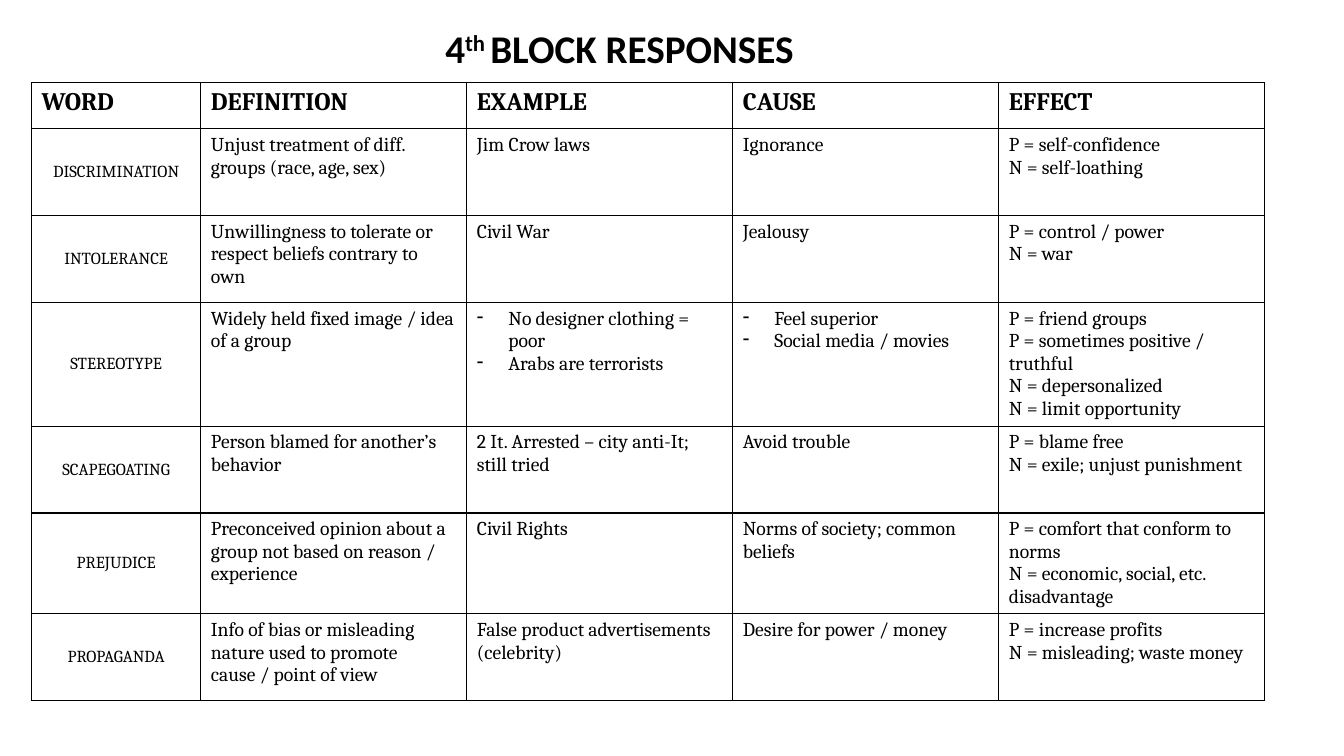
"""Builds a vocabulary table slide of class responses."""
from dataclasses import dataclass

from lxml import etree
from pptx import Presentation
from pptx import util as u
from pptx.dml.color import RGBColor
from pptx.enum import text
from pptx.oxml import ns


@dataclass(frozen=True)
class Theme:
    """Colours, fonts and type sizes."""
    ink: str = "000000"
    title_font: str = "Calibri"
    table_font: str = "Cambria"
    title_size: int = 28
    header_size: int = 18
    answer_size: int = 14
    word_size: int = 12
    rule_width: int = 1
    indent: float = 22.5


HEADINGS = ["WORD", "DEFINITION", "EXAMPLE", "CAUSE", "EFFECT"]
RESPONSES = [
    ["DISCRIMINATION", "Unjust treatment of diff. groups (race, age, sex)",
     "Jim Crow laws", "Ignorance", "P = self-confidence\nN = self-loathing"],
    ["INTOLERANCE", "Unwillingness to tolerate or respect beliefs contrary to own",
     "Civil War", "Jealousy", "P = control / power\nN = war"],
    ["STEREOTYPE", "Widely held fixed image / idea of a group",
     ["No designer clothing = poor", "Arabs are terrorists"],
     ["Feel superior", "Social media / movies"],
     "P = friend groups\nP = sometimes positive / truthful\n"
     "N = depersonalized\nN = limit opportunity"],
    ["SCAPEGOATING", "Person blamed for another’s behavior",
     "2 It. Arrested – city anti-It; still tried", "Avoid trouble",
     "P = blame free\nN = exile; unjust punishment"],
    ["PREJUDICE", "Preconceived opinion about a group not based on reason / experience",
     "Civil Rights", "Norms of society; common beliefs",
     "P = comfort that conform to norms\nN = economic, social, etc. disadvantage"],
    ["PROPAGANDA", "Info of bias or misleading nature used to promote cause / point of view",
     "False product advertisements (celebrity)", "Desire for power / money",
     "P = increase profits\nN = misleading; waste money"],
]
COLUMN_WIDTHS = [121] + [190] * 4
ROW_HEIGHTS = [33, 62, 62, 88.5, 62, 72, 62]


class SlideBuilder:
    """Draws styled elements on one slide."""

    def __init__(self, slide, theme):
        self.slide = slide
        self.theme = theme

    def style(self, paragraph, family, size, bold):
        """Set the font of a whole paragraph."""
        font = paragraph.font
        font.name, font.size, font.bold = family, u.Pt(size), bold
        font.color.rgb = RGBColor.from_string(self.theme.ink)

    def title(self, parts, left, top, width, height):
        """Fill the title from (wording, raised) parts."""
        heading = self.slide.shapes.title
        heading.left, heading.top = u.Pt(left), u.Pt(top)
        heading.width, heading.height = u.Pt(width), u.Pt(height)
        frame = heading.text_frame
        frame.vertical_anchor = text.MSO_ANCHOR.TOP
        frame.word_wrap = True
        line = frame.paragraphs[0]
        line.alignment = text.PP_ALIGN.CENTER
        self.style(line, self.theme.title_font, self.theme.title_size, True)
        for wording, raised in parts:
            run = line.add_run()
            run.text = wording
            if raised:
                run.font._element.set("baseline", "30000")

    def border(self, cell):
        """Rule all four sides of a cell."""
        properties = cell._tc.get_or_add_tcPr()
        for side in ("lnL", "lnR", "lnT", "lnB"):
            rule = etree.SubElement(properties, ns.qn(f"a:{side}"),
                                    w=str(u.Pt(self.theme.rule_width)))
            paint = etree.SubElement(rule, ns.qn("a:solidFill"))
            etree.SubElement(paint, ns.qn("a:srgbClr"), val=self.theme.ink)

    def dash(self, paragraph):
        """Give a paragraph a hanging dash."""
        properties = paragraph._p.get_or_add_pPr()
        indent = u.Pt(self.theme.indent)
        properties.set("marL", str(indent))
        properties.set("indent", str(-indent))
        etree.SubElement(properties, ns.qn("a:buChar"), char="-")

    def cell(self, cell, content, size, bold=False, centred=False):
        """Write a cell; a list becomes dashed items."""
        self.border(cell)
        cell.fill.background()
        dashed = isinstance(content, list)
        cell.text = "\n".join(content) if dashed else content
        if centred:
            cell.vertical_anchor = text.MSO_ANCHOR.MIDDLE
        for paragraph in cell.text_frame.paragraphs:
            if dashed:
                self.dash(paragraph)
            if centred:
                paragraph.alignment = text.PP_ALIGN.CENTER
            self.style(paragraph, self.theme.table_font, size, bold)

    def table(self, headings, responses, left, top, widths, heights):
        """Draw the headings and the responses below them."""
        grid = self.slide.shapes.add_table(
            len(heights), len(widths), u.Pt(left), u.Pt(top),
            u.Pt(sum(widths)), u.Pt(sum(heights))).table
        grid.first_row = grid.horz_banding = False
        for column, width in zip(grid.columns, widths):
            column.width = u.Pt(width)
        for row, height in zip(grid.rows, heights):
            row.height = u.Pt(height)
        for column, heading in enumerate(headings):
            self.cell(grid.cell(0, column), heading, self.theme.header_size, bold=True)
        for row, (word, *answers) in enumerate(responses, 1):
            self.cell(grid.cell(row, 0), word, self.theme.word_size, centred=True)
            for column, answer in enumerate(answers, 1):
                self.cell(grid.cell(row, column), answer, self.theme.answer_size)


def main():
    """Build and save the slide."""
    deck = Presentation()
    deck.slide_width, deck.slide_height = u.Pt(960), u.Pt(540)
    builder = SlideBuilder(deck.slides.add_slide(deck.slide_layouts[5]), Theme())
    builder.title([("4", False), ("th ", True), ("BLOCK RESPONSES", False)],
                  247.5, 13.5, 390, 41)
    builder.table(HEADINGS, RESPONSES, 22.5, 59, COLUMN_WIDTHS, ROW_HEIGHTS)
    deck.save("out.pptx")


if __name__ == "__main__":
    main()
